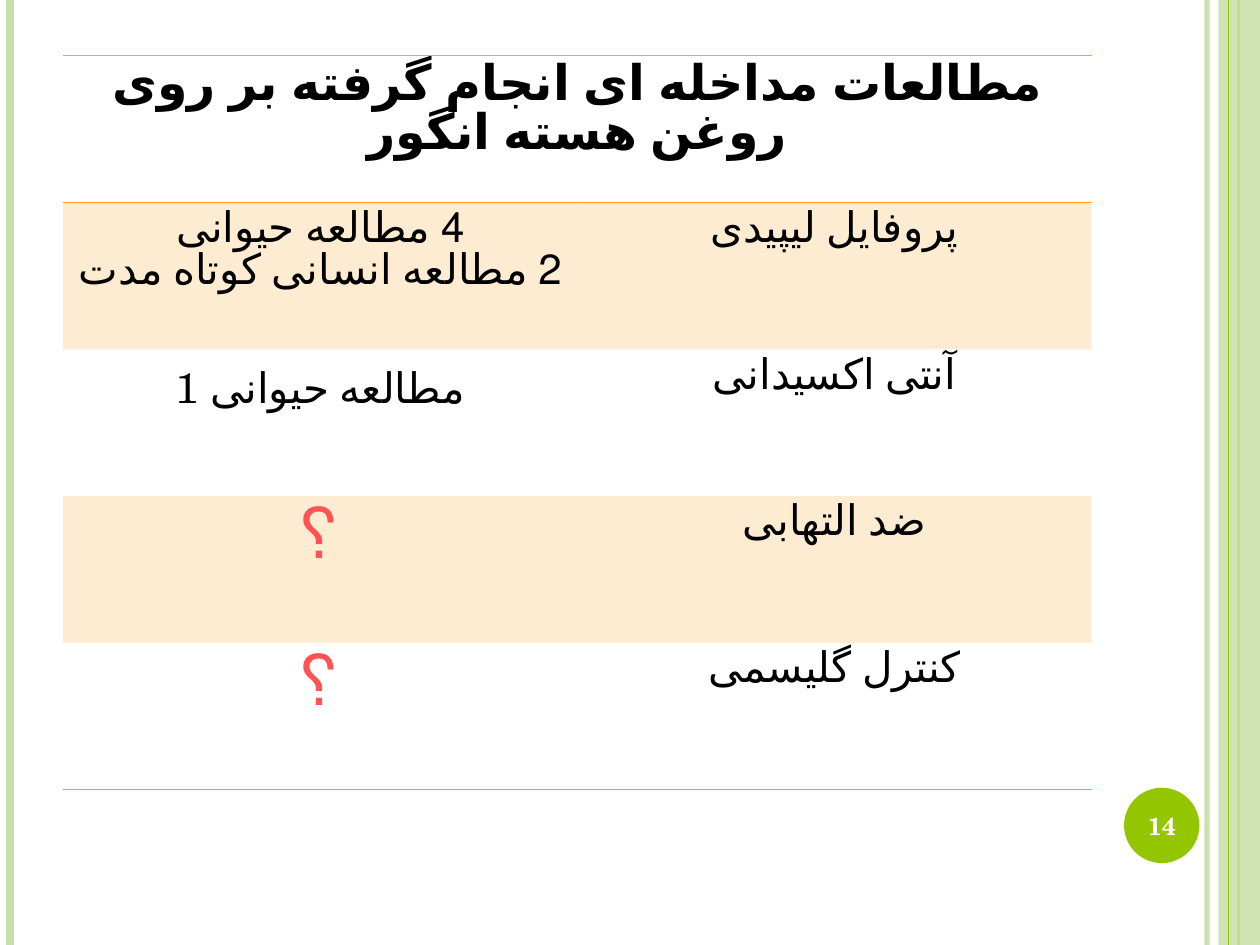
"""Build a slide with a table of intervention studies on grape seed oil."""
from lxml import etree
from pptx import Presentation
from pptx.dml.color import RGBColor
from pptx.enum.lang import MSO_LANGUAGE_ID
from pptx.enum.shapes import MSO_CONNECTOR, MSO_SHAPE
from pptx.enum.text import MSO_ANCHOR, PP_ALIGN
from pptx.oxml.ns import qn
from pptx.util import Cm, Pt

STRAIGHT = MSO_CONNECTOR.STRAIGHT
RECTANGLE, OVAL = MSO_SHAPE.RECTANGLE, MSO_SHAPE.OVAL
CENTER, MIDDLE = PP_ALIGN.CENTER, MSO_ANCHOR.MIDDLE
FARSI = MSO_LANGUAGE_ID.FARSI
PALE_GREEN = RGBColor(0xC8, 0xDF, 0xAB)
GREEN = RGBColor(0x94, 0xC6, 0x00)
ORANGE = RGBColor(0xFE, 0xA0, 0x22)
RED = RGBColor(0xFF, 0x53, 0x53)
BLACK = RGBColor(0, 0, 0)
WHITE = RGBColor(0xFF, 0xFF, 0xFF)
BODY_FONT, MARK_FONT = "TeX Gyre Schola", "Times New Roman"
LIGHT_STYLE = "{3B4B98B0-60AC-42C2-AFA5-B58CD77FA1E5}"
MARK = "؟"


def set_alpha(parent, percent):
    color = next(parent.iter(qn("a:srgbClr")))
    etree.SubElement(color, qn("a:alpha"), val=str(percent * 1000))


def add_borders(cell, sides):
    tcPr = cell._tc.get_or_add_tcPr()
    for position, side in enumerate(sides):
        ln = etree.Element(qn(f"a:{side}"), w=str(Pt(1)), cap="flat", cmpd="sng", algn="ctr")
        fill = etree.SubElement(ln, qn("a:solidFill"))
        etree.SubElement(fill, qn("a:srgbClr"), val=str(ORANGE))
        etree.SubElement(ln, qn("a:prstDash"), val="solid")
        tcPr.insert(position, ln)


prs = Presentation()
prs.slide_width, prs.slide_height = Cm(25.4), Cm(19.05)
s = prs.slides.add_slide(prs.slide_layouts[6])

band = s.shapes.add_shape(RECTANGLE, Cm(24.56), 0, Cm(0.84), prs.slide_height)
badge = s.shapes.add_shape(OVAL, Cm(22.66), Cm(15.88), Cm(1.52), Cm(1.52))
for shape, color in ((band, PALE_GREEN), (badge, GREEN)):
    shape.shadow.inherit = False
    shape.fill.solid()
    shape.fill.fore_color.rgb = color
    shape.line.fill.background()
set_alpha(band._element.spPr, 87)

for x, color, width, opacity, behind_band in (
    (24.33, PALE_GREEN, 3, 93, True),
    (0.21, PALE_GREEN, 4.5, 100, True),
    (24.97, GREEN, 1.5, 100, True),
    (24.77, GREEN, 0.75, 100, False),
):
    rule = s.shapes.add_connector(STRAIGHT, Cm(x), 0, Cm(x), prs.slide_height)
    rule.line.color.rgb = color
    rule.line.width = Pt(width)
    if opacity < 100:
        set_alpha(rule._element.spPr, opacity)
    etree.SubElement(rule._element.spPr, qn("a:effectLst"))
    if behind_band:
        band._element.addprevious(rule._element)

rows = [
    ["مطالعات مداخله ای انجام گرفته بر روی روغن هسته انگور", ""],
    ["4 مطالعه حیوانی\n2 مطالعه انسانی کوتاه مدت", "پروفایل لیپیدی"],
    ["1 مطالعه حیوانی", "آنتی اکسیدانی"],
    [MARK, "ضد التهابی"],
    [MARK, "کنترل گلیسمی"],
]
RTL_CELLS = {(1, 0), (1, 1), (2, 1), (3, 1)}
BORDERS = {0: ("lnT", "lnB"), len(rows) - 1: ("lnB",)}
frame = s.shapes.add_table(5, 2, Cm(1.27), Cm(1.12), Cm(20.74), Cm(14.8))
table = frame.table
table._tbl.tblPr.find(qn("a:tableStyleId")).text = LIGHT_STYLE
for column in table.columns:
    column.width = Cm(10.37)
for row in table.rows:
    row.height = Cm(2.96)
table.cell(0, 0).merge(table.cell(0, 1))

for i, texts in enumerate(rows):
    for j, text in enumerate(texts):
        cell = table.cell(i, j)
        if i % 2:
            cell.fill.solid()
            cell.fill.fore_color.rgb = ORANGE
            set_alpha(cell._tc.tcPr, 20)
        else:
            cell.fill.background()
        add_borders(cell, BORDERS.get(i, ()))
        if not text:
            continue
        cell.text_frame.text = text
        for p in cell.text_frame.paragraphs:
            p.alignment = CENTER
            if (i, j) in RTL_CELLS:
                p._p.get_or_add_pPr().set("rtl", "1")
            for r in p.runs:
                r.font.language_id = FARSI
                r.font.name = MARK_FONT if text == MARK else BODY_FONT
                r.font.size = Pt(40 if text == MARK else 28 if i == 0 else 24)
                r.font.color.rgb = RED if text == MARK else BLACK
                r.font.bold = i == 0

number = s.shapes.add_textbox(Cm(22.58), Cm(15.93), Cm(1.69), Cm(1.45))
tf = number.text_frame
tf.word_wrap = True
tf.vertical_anchor = MIDDLE
tf.text = "14"
p = tf.paragraphs[0]
p.alignment = CENTER
r = p.runs[0]
r.font.name, r.font.size, r.font.bold = BODY_FONT, Pt(14), True
r.font.color.rgb = WHITE

prs.save("out.pptx")
